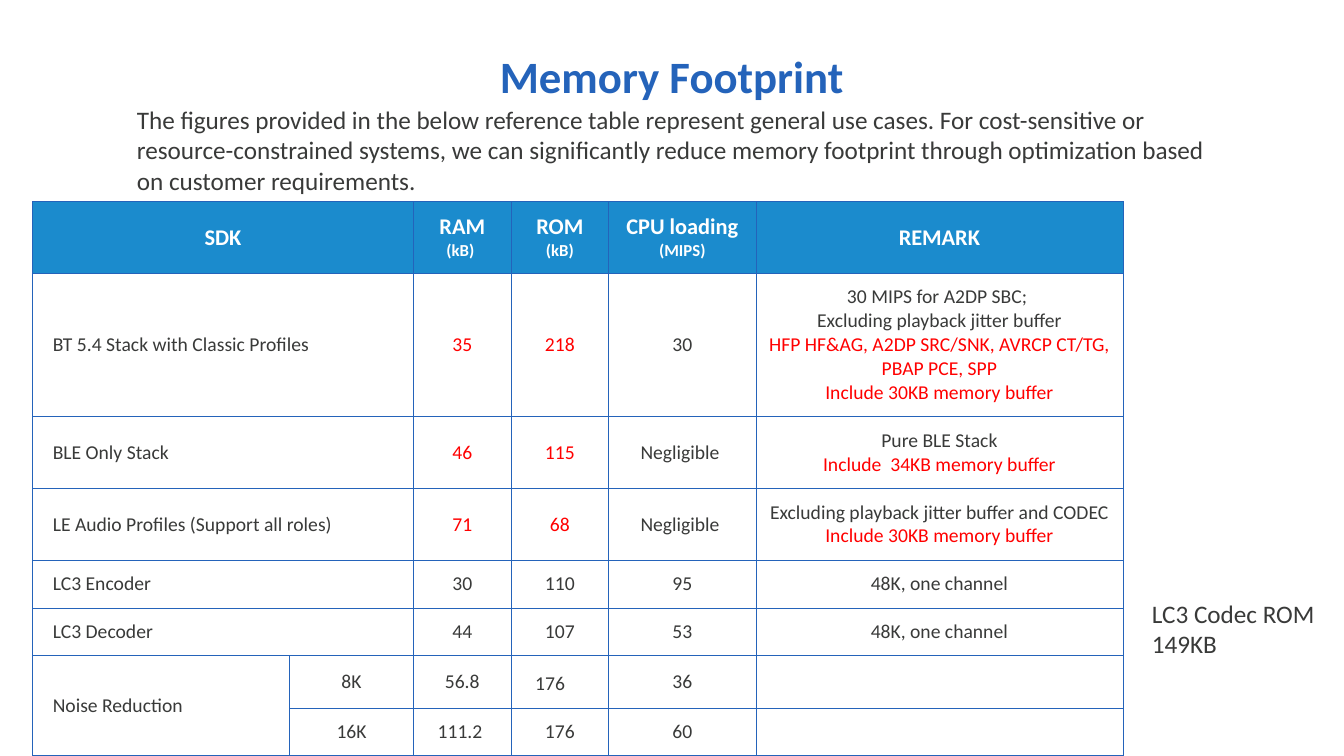
"""Build the Memory Footprint slide with its SDK resource table."""
from typing import Any, NamedTuple

from lxml.etree import SubElement
from pptx import Presentation
from pptx.dml.color import RGBColor
from pptx.enum.text import MSO_ANCHOR as Anchor, MSO_AUTO_SIZE as AutoSize, PP_ALIGN as Align
from pptx.oxml.ns import qn
from pptx.util import Cm, Pt

BLUE, HEADER_BLUE, GRAY, RED, WHITE = "2463BA", "1B8BCD", "393A39", "FF0000", "FFFFFF"
COLUMN_WIDTHS = [6.48, 3.12, 2.46, 2.46, 3.71, 9.25]


class Line(NamedTuple):
    text: str
    size: float = 14
    color: str = GRAY
    bold: bool = False
    align: Any = Align.CENTER
    spacing: float = 1.0


class Row(NamedTuple):
    height: float
    cells: list[list[Line]]


class TextBlock(NamedTuple):
    left: float
    top: float
    width: float
    height: float
    lines: list[Line]
    frame_format: dict[str, Any]


def heading(text: str, unit: str = "") -> list[Line]:
    lines = [Line(text, 16, WHITE, True)]
    return lines + [Line(unit, 12, WHITE, True)] if unit else lines


def label(text: str) -> list[Line]:
    return [Line(text, align=Align.LEFT)]


def plain(*texts: str) -> list[Line]:
    return [Line(text) for text in texts]


def red(*texts: str) -> list[Line]:
    return [Line(text, color=RED) for text in texts]


ROWS = [
    Row(1.8, [heading("SDK"), [], heading("RAM", "(kB) "), heading("ROM", "(kB)"),
              heading("CPU loading", "(MIPS)"), heading("REMARK")]),
    Row(3.61, [label("BT 5.4 Stack with Classic Profiles"), [], red("35"), red("218"), plain("30"),
               plain("30 MIPS for A2DP SBC; ", "Excluding playback jitter buffer")
               + red("HFP HF&AG, A2DP SRC/SNK, AVRCP CT/TG, PBAP PCE, SPP",
                     "Include 30KB memory buffer")]),
    Row(1.81, [label("BLE Only Stack"), [], red("46"), red("115"), plain("Negligible "),
               plain("Pure BLE Stack") + red("Include  34KB memory buffer")]),
    Row(1.81, [label("LE Audio Profiles (Support all roles)"), [], red("71"), red("68"),
               plain("Negligible "), plain("Excluding playback jitter buffer and CODEC")
               + red("Include 30KB memory buffer")]),
    Row(1.2, [label("LC3 Encoder"), [], plain("30"), plain("110"), plain("95"),
              plain("48K, one channel")]),
    Row(1.2, [label("LC3 Decoder"), [], plain("44"), plain("107"), plain("53"),
              plain("48K, one channel")]),
    Row(1.3, [label("Noise Reduction"), plain("8K"), plain("56.8"), plain("176　"), plain("36"), []]),
    Row(1.2, [[], plain("16K"), plain("111.2 "), plain("176"), plain("60"), []]),
]

INTRO = ("The figures provided in the below reference table represent general use cases. "
         "For cost-sensitive or resource-constrained systems, we can significantly reduce "
         "memory footprint through optimization based on customer requirements.")

TEXT_BLOCKS = [
    TextBlock(5.08, 1.09, 23.7, 1.8, [Line("Memory Footprint", 32, BLUE, True, spacing=0.9)],
              {"word_wrap": True, "vertical_anchor": Anchor.MIDDLE}),
    TextBlock(3.2, 2.51, 27.48, 2.57, [Line(INTRO, 18, align=Align.LEFT)],
              {"word_wrap": True, "auto_size": AutoSize.SHAPE_TO_FIT_TEXT}),
    TextBlock(28.78, 14.94, 4.8, 1.8,
              [Line(text, 18, align=Align.LEFT) for text in ("LC3 Codec ROM", "149KB")],
              {"word_wrap": False, "auto_size": AutoSize.SHAPE_TO_FIT_TEXT}),
]


def rgb(color: str) -> RGBColor:
    return RGBColor.from_string(color)


def apply_format(target: Any, values: dict[str, Any]) -> None:
    for name, value in values.items():
        setattr(target, name, value)


def write_lines(frame: Any, lines: list[Line]) -> None:
    for index, line in enumerate(lines):
        para = frame.add_paragraph() if index else frame.paragraphs[0]
        apply_format(para, {"alignment": line.align, "line_spacing": line.spacing})
        span = para.add_run()
        span.text = line.text
        apply_format(span.font, {"name": "Calibri", "size": Pt(line.size), "bold": line.bold})
        span.font.color.rgb = rgb(line.color)


def add_borders(cell: Any) -> None:
    properties = cell._tc.get_or_add_tcPr()
    for side in ("a:lnL", "a:lnR", "a:lnT", "a:lnB"):
        border = SubElement(properties, qn(side), w=str(Pt(0.5)))
        SubElement(SubElement(border, qn("a:solidFill")), qn("a:srgbClr"), val=BLUE)


def fill_cell(cell: Any, lines: list[Line], is_header: bool) -> None:
    add_borders(cell)
    if is_header:
        cell.fill.solid()
        cell.fill.fore_color.rgb = rgb(HEADER_BLUE)
    else:
        cell.fill.background()
    if lines:
        side = Cm(0.51 if lines[0].align == Align.LEFT else 0.2)
        apply_format(cell, {"vertical_anchor": Anchor.MIDDLE, "margin_left": side,
                            "margin_right": side, "margin_top": Cm(0.3), "margin_bottom": Cm(0.3)})
        write_lines(cell.text_frame, lines)


def add_footprint_table(page: Any) -> None:
    height = sum(row.height for row in ROWS)
    table = page.shapes.add_table(len(ROWS), len(COLUMN_WIDTHS), Cm(0.82), Cm(5.08),
                                  Cm(sum(COLUMN_WIDTHS)), Cm(height)).table
    apply_format(table, {"first_row": False, "horz_banding": False})
    for column, width in zip(table.columns, COLUMN_WIDTHS):
        column.width = Cm(width)
    for row_index, row in enumerate(ROWS):
        table.rows[row_index].height = Cm(row.height)
        for column_index, lines in enumerate(row.cells):
            fill_cell(table.cell(row_index, column_index), lines, row_index == 0)
    last = len(ROWS) - 1
    for row_index in range(last - 1):
        table.cell(row_index, 0).merge(table.cell(row_index, 1))
    table.cell(last - 1, 0).merge(table.cell(last, 0))


def add_text_block(page: Any, block: TextBlock) -> None:
    box = page.shapes.add_textbox(Cm(block.left), Cm(block.top), Cm(block.width), Cm(block.height))
    apply_format(box.text_frame, block.frame_format)
    write_lines(box.text_frame, block.lines)


def main() -> None:
    deck = Presentation()
    apply_format(deck, {"slide_width": Cm(33.87), "slide_height": Cm(19.05)})
    page = deck.slides.add_slide(deck.slide_layouts[6])
    add_footprint_table(page)
    for block in TEXT_BLOCKS:
        add_text_block(page, block)
    deck.save("out.pptx")


if __name__ == "__main__":
    main()
